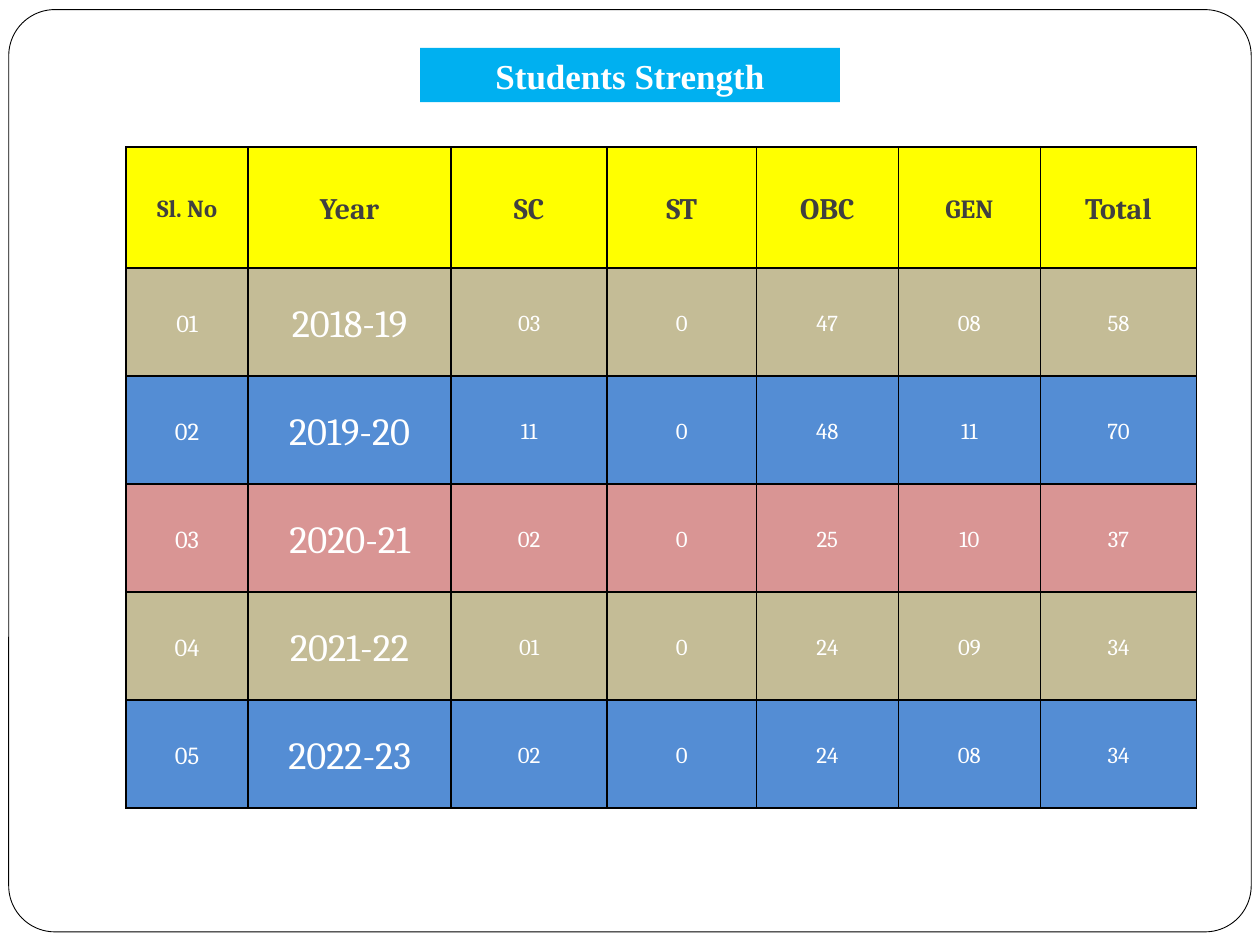
from dataclasses import dataclass

from lxml.etree import SubElement
from pptx import Presentation
from pptx.dml.color import RGBColor
from pptx.enum.shapes import MSO_SHAPE
from pptx.enum.text import MSO_ANCHOR, MSO_AUTO_SIZE, PP_ALIGN
from pptx.oxml.ns import qn
from pptx.slide import Slide
from pptx.table import _Cell
from pptx.util import Pt

WHITE, BLACK, DARK_GREY = "FFFFFF", "000000", "404040"
SKY, YELLOW = "00B0F0", "FFFF00"
TAN, BLUE, ROSE = "C4BC96", "548DD4", "D99594"
ROW_FILLS = (TAN, BLUE, ROSE)
HEADER_HEIGHT, ROW_HEIGHT = 69.1, 61.75


@dataclass(frozen=True)
class Column:
    heading: str
    width: float
    heading_size: float = 17
    body_size: float = 13


@dataclass(frozen=True)
class CellStyle:
    fill: str
    color: str
    size: float
    bold: bool = False


COLUMNS = (
    Column("Sl. No", 69.8, heading_size=14, body_size=14),
    Column("Year", 116, body_size=22),
    Column("SC", 89.2),
    Column("ST", 85.2),
    Column("OBC", 81.2),
    Column("GEN", 81.2, heading_size=15),
    Column("Total", 89.2),
)
STRENGTH = (
    ("01", "2018-19", "03", "0", "47", "08", "58"),
    ("02", "2019-20", "11", "0", "48", "11", "70"),
    ("03", "2020-21", "02", "0", "25", "10", "37"),
    ("04", "2021-22", "01", "0", "24", "09", "34"),
    ("05", "2022-23", "02", "0", "24", "08", "34"),
)


def rgb(color: str) -> RGBColor:
    return RGBColor.from_string(color)


def format_text(paragraph, font_name: str, size: float, color: str, bold: bool) -> None:
    paragraph.alignment = PP_ALIGN.CENTER
    for run in paragraph.runs:
        run.font.name = font_name
        run.font.size = Pt(size)
        run.font.bold = bold
        run.font.color.rgb = rgb(color)


def add_border(cell: _Cell, color: str, width: float) -> None:
    properties = cell._tc.get_or_add_tcPr()
    for index, side in enumerate(("a:lnL", "a:lnR", "a:lnT", "a:lnB")):
        line = SubElement(properties, qn(side), w=str(Pt(width)))
        SubElement(SubElement(line, qn("a:solidFill")), qn("a:srgbClr"), val=color)
        properties.insert(index, line)  # borders precede the fill


def fill_cell(cell: _Cell, text: str, style: CellStyle) -> None:
    cell.margin_left = cell.margin_right = Pt(3)
    cell.margin_top = cell.margin_bottom = Pt(0)
    cell.vertical_anchor = MSO_ANCHOR.MIDDLE
    cell.fill.solid()
    cell.fill.fore_color.rgb = rgb(style.fill)
    cell.text_frame.text = text
    paragraph = cell.text_frame.paragraphs[0]
    paragraph.line_spacing = 1.15
    format_text(paragraph, "Cambria", style.size, style.color, style.bold)
    add_border(cell, BLACK, 1)


def add_frame(slide: Slide) -> None:
    """Add the rounded page outline behind everything else."""
    frame = slide.shapes.add_shape(
        MSO_SHAPE.ROUNDED_RECTANGLE, Pt(5), Pt(5.5), Pt(710), Pt(527))
    frame.adjustments[0] = 0.05
    frame.shadow.inherit = False
    frame.fill.solid()
    frame.fill.fore_color.rgb = rgb(WHITE)
    frame.line.color.rgb = rgb(BLACK)
    frame.line.width = Pt(0.5)
    slide.shapes.title._element.addprevious(frame._element)


def set_title(slide: Slide, text: str) -> None:
    title = slide.shapes.title
    title.left, title.top, title.width, title.height = Pt(240), Pt(27.4), Pt(240), Pt(31)
    title.fill.solid()
    title.fill.fore_color.rgb = rgb(SKY)
    title.text_frame.text = text
    title.text_frame.auto_size = MSO_AUTO_SIZE.NONE
    title.text_frame.vertical_anchor = MSO_ANCHOR.MIDDLE
    format_text(title.text_frame.paragraphs[0], "Times New Roman", 20, WHITE, True)


def add_strength_table(slide: Slide) -> None:
    width = sum(column.width for column in COLUMNS)
    height = HEADER_HEIGHT + ROW_HEIGHT * len(STRENGTH)
    table = slide.shapes.add_table(
        len(STRENGTH) + 1, len(COLUMNS), Pt(72), Pt(84), Pt(width), Pt(height)).table
    table.rows[0].height = Pt(HEADER_HEIGHT)
    for row_index in range(1, len(STRENGTH) + 1):
        table.rows[row_index].height = Pt(ROW_HEIGHT)

    for column_index, column in enumerate(COLUMNS):
        table.columns[column_index].width = Pt(column.width)
        heading_style = CellStyle(YELLOW, DARK_GREY, column.heading_size, bold=True)
        fill_cell(table.cell(0, column_index), column.heading, heading_style)
        for row_index, year_row in enumerate(STRENGTH):
            row_fill = ROW_FILLS[row_index % len(ROW_FILLS)]
            fill_cell(table.cell(row_index + 1, column_index), year_row[column_index],
                      CellStyle(row_fill, WHITE, column.body_size))


def main() -> None:
    presentation = Presentation()
    presentation.slide_width, presentation.slide_height = Pt(720), Pt(540)
    slide = presentation.slides.add_slide(presentation.slide_layouts[5])
    add_frame(slide)
    set_title(slide, "Students Strength")
    add_strength_table(slide)
    presentation.save("out.pptx")


if __name__ == "__main__":
    main()
